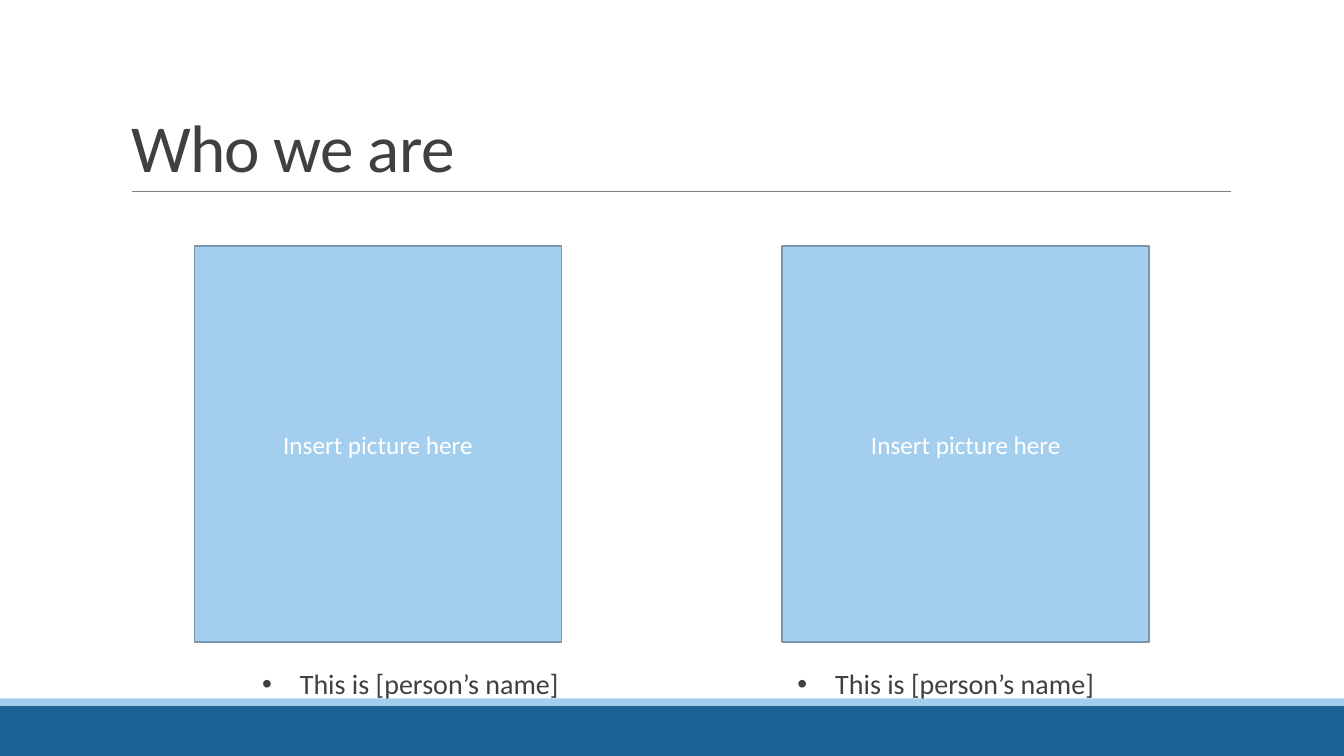
"""Build the "Who we are" slide with two portrait frames and captions."""
from dataclasses import dataclass

from lxml import etree
from pptx import Presentation
from pptx.dml.color import RGBColor
from pptx.enum.shapes import MSO_CONNECTOR, MSO_SHAPE
from pptx.enum.text import MSO_ANCHOR, MSO_AUTO_SIZE, PP_ALIGN
from pptx.oxml.ns import qn
from pptx.util import Inches, Pt

RECTANGLE = MSO_SHAPE.RECTANGLE
STRAIGHT = MSO_CONNECTOR.STRAIGHT
TOP, MIDDLE, BOTTOM = MSO_ANCHOR.TOP, MSO_ANCHOR.MIDDLE, MSO_ANCHOR.BOTTOM
LEFT, CENTER = PP_ALIGN.LEFT, PP_ALIGN.CENTER
NO_AUTOFIT = MSO_AUTO_SIZE.NONE

TITLE = "Who we are"
PEOPLE = [
    {"frame": "Insert picture here", "frame_left": 1.93,
     "caption": "This is [person’s name]", "caption_left": 1.37},
    {"frame": "Insert picture here", "frame_left": 7.76,
     "caption": "This is [person’s name]", "caption_left": 6.68},
]


@dataclass(frozen=True)
class Theme:
    """Colours, font and type sizes of the slide."""
    font: str = "Calibri"
    ink: str = "404040"
    white: str = "FFFFFF"
    deep_blue: str = "1C6294"
    light_blue: str = "A3CEED"
    frame_line: str = "7998AF"
    rule: str = "808080"
    title_size: float = 48
    caption_size: float = 20
    frame_size: float = 18


THEME = Theme()
SLIDE_WIDTH, SLIDE_HEIGHT = 13.33, 7.5
FOOTER_TOP, STRIPE_HEIGHT = 7, 0.07
FRAME_TOP, FRAME_WIDTH, FRAME_HEIGHT = 2.44, 3.64, 3.93
CAPTION_TOP, CAPTION_WIDTH, CAPTION_HEIGHT = 2.08, 5.4, 4.92
RULE_LEFT, RULE_RIGHT, RULE_TOP = 1.31, 12.21, 1.9


def color(value):
    """Return the colour for a hex string."""
    return RGBColor.from_string(value)


def place(shape, left, top, width, height):
    """Move and size a shape, in inches."""
    shape.left, shape.top = Inches(left), Inches(top)
    shape.width, shape.height = Inches(width), Inches(height)


def write(shape, text, size, ink, anchor, alignment):
    """Fill a shape with one formatted paragraph and return it."""
    frame = shape.text_frame
    frame.text = text
    frame.word_wrap = True
    frame.auto_size = NO_AUTOFIT
    frame.vertical_anchor = anchor
    paragraph = frame.paragraphs[0]
    paragraph.alignment = alignment
    paragraph.space_before = Pt(0)
    paragraph.font.name = THEME.font
    paragraph.font.size = Pt(size)
    paragraph.font.color.rgb = color(ink)
    return paragraph


def add_rectangle(slide, left, top, width, height, fill, line=None):
    """Add a flat rectangle, outlined only if a line colour is given."""
    shape = slide.shapes.add_shape(
        RECTANGLE, Inches(left), Inches(top), Inches(width), Inches(height))
    shape.shadow.inherit = False
    shape.fill.solid()
    shape.fill.fore_color.rgb = color(fill)
    if line:
        shape.line.color.rgb = color(line)
        shape.line.width = Pt(1.25)
    else:
        shape.line.fill.background()
    return shape


def add_background(slide):
    """Add the footer bars and the rule under the title."""
    add_rectangle(slide, 0, FOOTER_TOP, SLIDE_WIDTH,
                  SLIDE_HEIGHT - FOOTER_TOP, THEME.deep_blue)
    add_rectangle(slide, 0, FOOTER_TOP - STRIPE_HEIGHT, SLIDE_WIDTH,
                  STRIPE_HEIGHT, THEME.light_blue)
    rule = slide.shapes.add_connector(
        STRAIGHT, Inches(RULE_LEFT), Inches(RULE_TOP),
        Inches(RULE_RIGHT), Inches(RULE_TOP))
    rule.line.color.rgb = color(THEME.rule)
    rule.line.width = Pt(0.5)
    etree.SubElement(rule._element.spPr, qn("a:effectLst"))


def fill_title(title):
    """Place and write the slide title."""
    place(title, 1.2, 0.31, 11, 1.59)
    paragraph = write(title, TITLE, THEME.title_size, THEME.ink, BOTTOM, LEFT)
    paragraph.line_spacing = 0.85
    paragraph.runs[0].font._element.set("spc", "-50")


def fill_caption(caption, person):
    """Place and write one caption without a bullet."""
    place(caption, person["caption_left"], CAPTION_TOP,
          CAPTION_WIDTH, CAPTION_HEIGHT)
    caption.text_frame.margin_left = caption.text_frame.margin_right = 0
    properties = caption.text_frame.paragraphs[0]._p.get_or_add_pPr()
    properties.set("marL", "0")
    properties.set("indent", "0")
    etree.SubElement(properties, qn("a:buNone"))
    paragraph = write(caption, person["caption"], THEME.caption_size,
                      THEME.ink, BOTTOM, CENTER)
    paragraph.line_spacing = 0.9
    paragraph.space_after = Pt(2)


def main():
    """Build and save the slide."""
    presentation = Presentation()
    presentation.slide_width = Inches(SLIDE_WIDTH)
    presentation.slide_height = Inches(SLIDE_HEIGHT)
    slide = presentation.slides.add_slide(presentation.slide_layouts[3])
    title, *captions = slide.placeholders
    add_background(slide)
    fill_title(title)
    for person, caption in zip(PEOPLE, captions):
        frame = add_rectangle(slide, person["frame_left"], FRAME_TOP,
                              FRAME_WIDTH, FRAME_HEIGHT,
                              THEME.light_blue, THEME.frame_line)
        write(frame, person["frame"], THEME.frame_size, THEME.white,
              MIDDLE, CENTER)
        fill_caption(caption, person)
        slide.shapes._spTree.append(caption._element)
    presentation.save("out.pptx")


if __name__ == "__main__":
    main()
